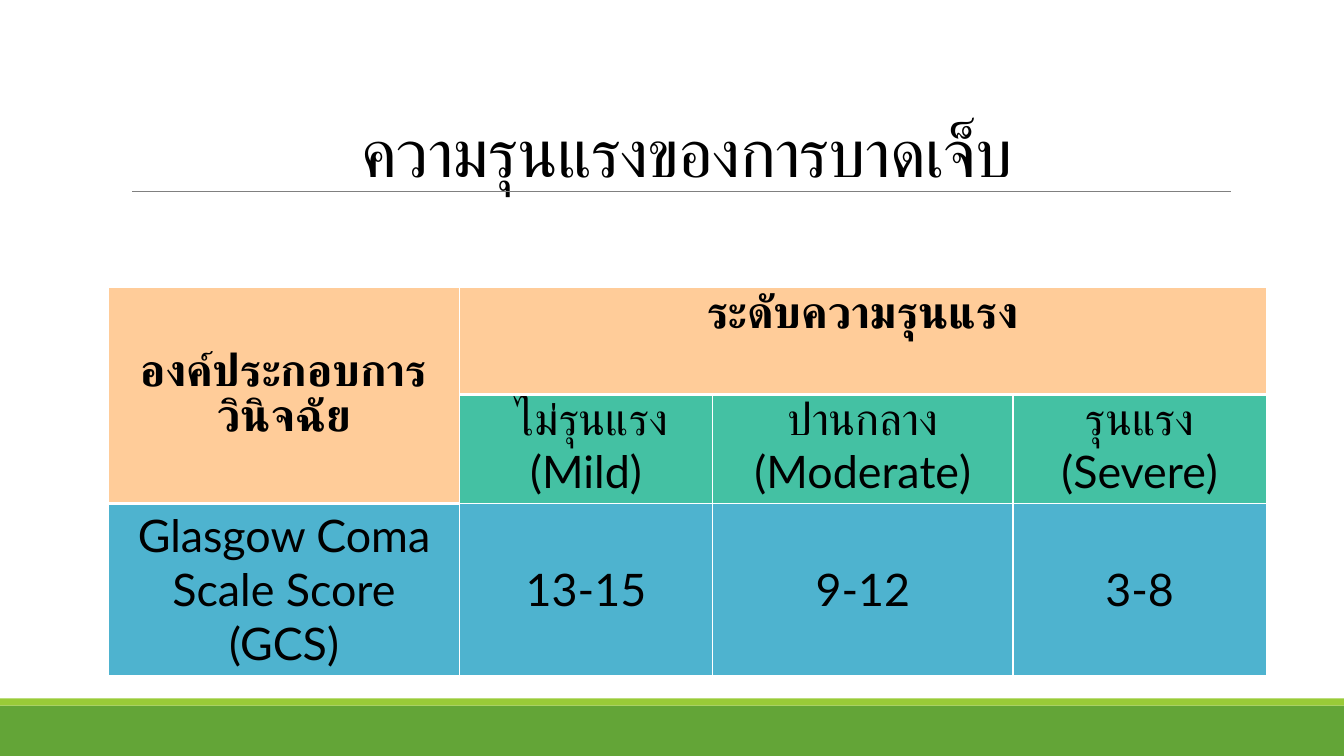
from dataclasses import dataclass

from lxml import etree
from pptx import Presentation
from pptx import util as u
from pptx.dml.color import RGBColor
from pptx.enum import shapes, text
from pptx.oxml.ns import qn


@dataclass(frozen=True)
class Theme:
    black: str = "000000"
    white: str = "FFFFFF"
    rule: str = "808080"
    band: str = "63A537"
    band_edge: str = "99CB38"
    header: str = "FFCC99"
    level: str = "44C1A3"
    score: str = "4EB3CF"
    title_font: str = "Calibri"
    table_font: str = "Lato"
    title_size: int = 48
    table_size: int = 32


class SlideBuilder:
    def __init__(self, slide, theme):
        self.slide = slide
        self.theme = theme

    def style(self, paragraph, font_name, size, bold=False):
        paragraph.alignment = text.PP_ALIGN.CENTER
        for run in paragraph.runs:
            run.font.name = font_name
            run.font.size = u.Pt(size)
            run.font.bold = bold
            run.font.color.rgb = RGBColor.from_string(self.theme.black)

    def bar(self, top, width, height, color):
        bar = self.slide.shapes.add_shape(
            shapes.MSO_SHAPE.RECTANGLE, 0, u.Cm(top), u.Cm(width), u.Cm(height))
        bar.shadow.inherit = False
        bar.fill.solid()
        bar.fill.fore_color.rgb = RGBColor.from_string(color)
        bar.line.fill.background()

    def rule(self, left, right, top):
        rule = self.slide.shapes.add_connector(
            shapes.MSO_CONNECTOR.STRAIGHT, u.Cm(left), u.Cm(top), u.Cm(right), u.Cm(top))
        rule.line.color.rgb = RGBColor.from_string(self.theme.rule)
        rule.line.width = u.Pt(0.5)
        etree.SubElement(rule._element.spPr, qn("a:effectLst"))

    def title(self, wording, left, top, width, height):
        title = self.slide.shapes.title
        title.left, title.top = u.Cm(left), u.Cm(top)
        title.width, title.height = u.Cm(width), u.Cm(height)
        frame = title.text_frame
        frame.text = wording
        frame.word_wrap = True
        frame.auto_size = text.MSO_AUTO_SIZE.NONE
        frame.vertical_anchor = text.MSO_ANCHOR.BOTTOM
        frame.margin_bottom = u.Cm(1.88)
        paragraph = frame.paragraphs[0]
        paragraph.line_spacing = 0.85
        self.style(paragraph, self.theme.title_font, self.theme.title_size)
        paragraph.runs[0].font._element.set("spc", "-50")

    def table(self, left, top, widths, heights):
        frame = self.slide.shapes.add_table(
            len(heights), len(widths), u.Cm(left), u.Cm(top),
            u.Cm(sum(widths)), u.Cm(sum(heights)))
        table = frame.table
        for column, width in zip(table.columns, widths):
            column.width = u.Cm(width)
        for row, height in zip(table.rows, heights):
            row.height = u.Cm(height)
        return table

    def borders(self, cell, thick=()):
        properties = cell._tc.get_or_add_tcPr()
        for position, side in enumerate("LRTB"):
            width = u.Pt(3 if side in thick else 1)
            line = etree.Element(qn(f"a:ln{side}"), w=str(width))
            fill = etree.SubElement(line, qn("a:solidFill"))
            etree.SubElement(fill, qn("a:srgbClr"), val=self.theme.white)
            properties.insert(position, line)

    def cell(self, cell, wording, color, middle=False, bold=False, thick=()):
        cell.fill.solid()
        cell.fill.fore_color.rgb = RGBColor.from_string(color)
        cell.vertical_anchor = text.MSO_ANCHOR.MIDDLE if middle else text.MSO_ANCHOR.TOP
        if wording:
            cell.text_frame.text = wording
            self.style(cell.text_frame.paragraphs[0], self.theme.table_font,
                       self.theme.table_size, bold)
        self.borders(cell, thick)


def main():
    theme = Theme()
    presentation = Presentation()
    presentation.slide_width, presentation.slide_height = u.Cm(33.87), u.Cm(19.05)
    slide = presentation.slides.add_slide(presentation.slide_layouts[5])
    builder = SlideBuilder(slide, theme)

    builder.bar(17.78, 33.87, 1.27, theme.band)
    builder.bar(17.6, 33.87, 0.18, theme.band_edge)
    builder.rule(3.33, 31.01, 4.83)
    builder.title("ความรุนแรงของการบาดเจ็บ", 3.35, 2.67, 27.94, 4.04)

    severity = builder.table(2.74, 7.24, [8.84, 6.38, 7.57, 6.38], [2.7, 2.72, 4.32])
    rows = [
        ["องค์ประกอบการวินิจฉัย", "ระดับความรุนแรง", "", ""],
        ["", " ไม่รุนแรง (Mild)", "ปานกลาง (Moderate)", "รุนแรง (Severe)"],
        ["Glasgow Coma Scale Score (GCS)", "13-15", "9-12", "3-8"],
    ]
    row_colors = [theme.header, theme.level, theme.score]
    thick_sides = ["B", "T", ""]
    for row, wordings in enumerate(rows):
        for column, wording in enumerate(wordings):
            diagnosis = column == 0 and row < 2
            scored = column > 0 and row == 2
            below_diagnosis = column == 0 and row == 2
            builder.cell(
                severity.cell(row, column), wording,
                theme.header if diagnosis else row_colors[row],
                middle=diagnosis or scored, bold=row == 0,
                thick="B" if diagnosis else "T" if below_diagnosis else thick_sides[row])
    severity.cell(0, 0).merge(severity.cell(1, 0))
    severity.cell(0, 1).merge(severity.cell(0, 3))

    presentation.save("out.pptx")


if __name__ == "__main__":
    main()
